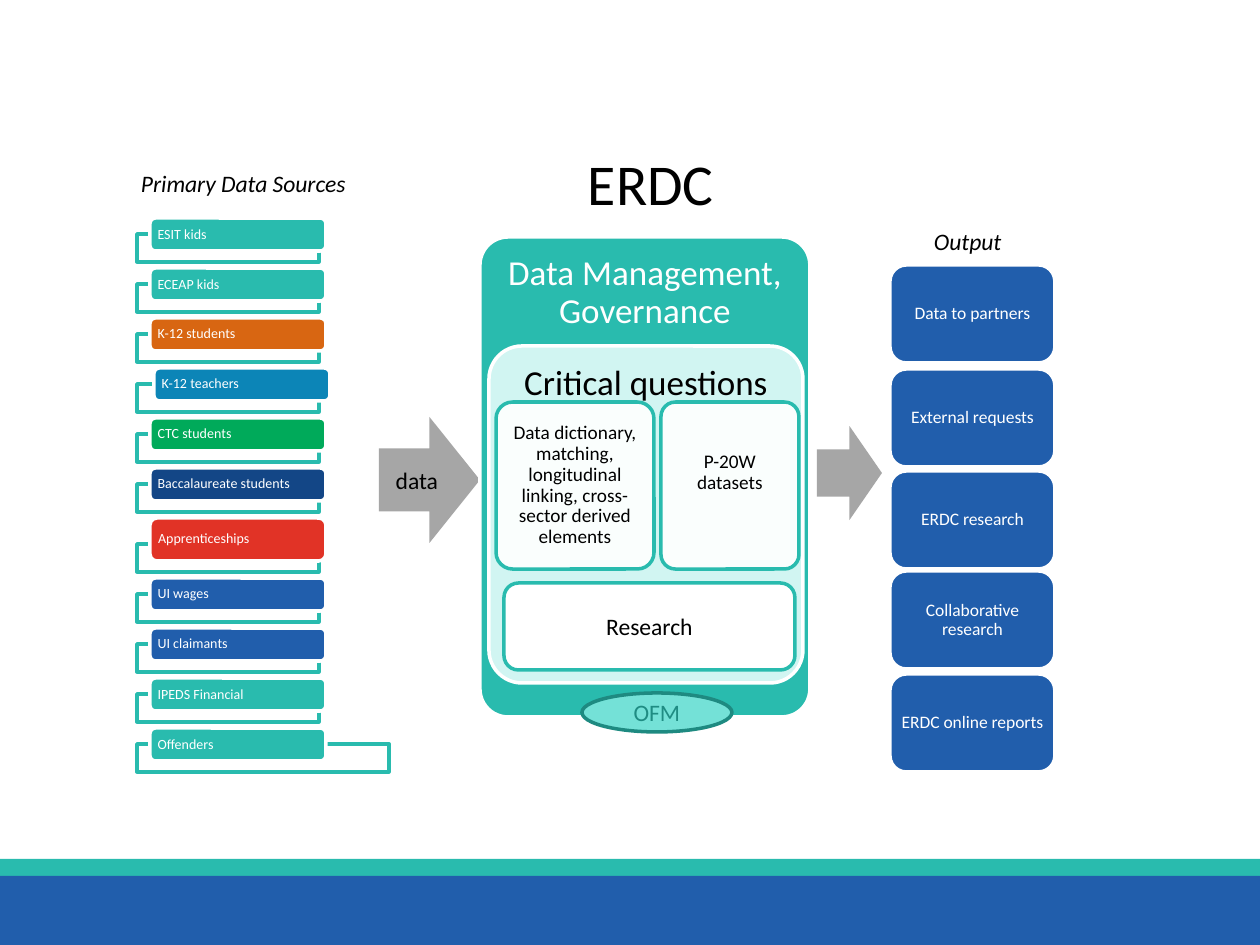
from dataclasses import dataclass

from lxml import etree
from pptx import Presentation
from pptx import util as u
from pptx.dml.color import RGBColor
from pptx.enum import shapes, text
from pptx.oxml.ns import qn

SCALE = 914400 / 126
KIND = shapes.MSO_SHAPE
ALIGN = text.PP_ALIGN
SIDE = text.MSO_ANCHOR


@dataclass(frozen=True)
class Theme:
    font: str = "Calibri"
    teal: str = "29BBAE"
    blue: str = "215EAC"
    navy: str = "134686"
    sky: str = "0C85B7"
    green: str = "00AA5A"
    orange: str = "D86612"
    red: str = "E13326"
    gray: str = "A6A6A6"
    mint: str = "D1F5F2"
    aqua: str = "74E1D7"
    pine: str = "1E8A81"
    moss: str = "1F8C83"
    white: str = "FFFFFF"
    black: str = "000000"
    tiny: float = 8
    small: float = 10
    note: float = 11
    label: float = 13.5
    head: float = 20
    title: float = 33
    rule: float = 2


T = Theme()


def px(n):
    return u.Emu(round(n * SCALE))


def rgb(tone):
    return RGBColor.from_string(tone)


def write(shape, words, size=T.label, color=T.black, italic=False, align=ALIGN.CENTER,
          side=SIDE.MIDDLE, pad=(13, 6, 13, 6), lead=1.0, wrap=True):
    frame = shape.text_frame
    frame.word_wrap = wrap
    frame.vertical_anchor = side
    frame.margin_left, frame.margin_top, frame.margin_right, frame.margin_bottom = map(px, pad)
    para = frame.paragraphs[0]
    para.alignment = align
    para.line_spacing = lead
    run = para.add_run()
    run.text = words
    font = run.font
    font.name, font.size, font.italic = T.font, u.Pt(size), italic
    font.color.rgb = rgb(color)


def draw(slide, kind, box, fill, line=None, round_by=None, alpha=None):
    shape = slide.shapes.add_shape(kind, *map(px, box))
    shape.shadow.inherit = False
    shape.fill.solid()
    shape.fill.fore_color.rgb = rgb(fill)
    if alpha:
        tone = shape.fill._xPr.find(qn("a:solidFill"))[0]
        etree.SubElement(tone, qn("a:alpha")).set("val", str(alpha * 1000))
    if line:
        shape.line.color.rgb = rgb(line)
        shape.line.width = u.Pt(T.rule)
    else:
        shape.line.fill.background()
    if round_by:
        shape.adjustments[0] = round_by
    return shape


def title(slide, box, words, **style):
    area = slide.shapes.add_textbox(*map(px, box))
    write(area, words, align=ALIGN.LEFT, side=SIDE.TOP, wrap=False, **style)


def footer(slide, box):
    x, y, w, h = box
    draw(slide, KIND.RECTANGLE, (x, y, w, 17), T.teal)
    draw(slide, KIND.RECTANGLE, (x, y + 17, w, h - 17), T.blue)


def sources(slide, box):
    x, y, w, h = box
    rows = [
        ("ESIT kids", T.teal), ("ECEAP kids", T.teal), ("K-12 students", T.orange),
        ("K-12 teachers", T.sky), ("CTC students", T.green),
        ("Baccalaureate students", T.navy), ("Apprenticeships", T.red),
        ("UI wages", T.blue), ("UI claimants", T.blue),
        ("IPEDS Financial", T.teal), ("Offenders", T.teal),
    ]
    for name, tone in rows:
        tall = 43 if name == "Apprenticeships" else 33
        shift = 17 if name == "K-12 teachers" else 13
        reach = w if name == "Offenders" else 182
        draw(slide, KIND.RECTANGLE, (x, y + tall - 17, reach, 28), T.white, T.teal)
        tag = draw(slide, KIND.ROUNDED_RECTANGLE, (x + shift, y, 176, tall), tone, T.white)
        write(tag, name, size=T.tiny, color=T.white, align=ALIGN.LEFT, pad=(6, 0, 6, 0), lead=0.9)
        y += tall + 17


def center(slide, box):
    x, y, w, h = box
    shell = draw(slide, KIND.ROUNDED_RECTANGLE, box, T.teal, T.white, 0.085)
    write(shell, "Data Management, Governance", size=T.head, color=T.white,
          side=SIDE.TOP, pad=(10, 10, 10, 10), lead=0.9)
    core = draw(slide, KIND.ROUNDED_RECTANGLE, (x + 9, y + 109, 314, 337), T.mint, T.white, 0.105)
    write(core, "Critical questions", size=T.head, side=SIDE.TOP, pad=(10, 10, 10, 10), lead=0.9)
    cards = [
        (16, 158, 6, "Data dictionary, matching, longitudinal linking, cross-sector derived elements"),
        (181, 138, 32, "P-20W datasets"),
    ]
    for left, wide, foot, words in cards:
        card = draw(slide, KIND.ROUNDED_RECTANGLE, (x + left, y + 165, wide, 167),
                    T.white, T.teal, 0.105, alpha=90)
        write(card, words, size=T.note, pad=(6, 6, 6, foot), lead=0.9)
    study = draw(slide, KIND.ROUNDED_RECTANGLE, (x + 24, y + 346, 291, 87), T.white, T.teal)
    write(study, "Research")


def outputs(slide, box):
    x, y, w, h = box
    rows = [
        (0, "Data to partners"), (104, "External requests"), (206, "ERDC research"),
        (306, "Collaborative research"), (409, "ERDC online reports"),
    ]
    for drop, name in rows:
        card = draw(slide, KIND.ROUNDED_RECTANGLE, (x, y + drop, w, 98), T.blue, T.white)
        write(card, name, size=T.small, color=T.white, pad=(5, 5, 5, 5), lead=0.9)


def main():
    deck = Presentation()
    deck.slide_width, deck.slide_height = px(1260), px(945)
    slide = deck.slides.add_slide(deck.slide_layouts[6])
    footer(slide, (0, 859, 1260, 86))
    sources(slide, (137, 218, 252, 555))
    title(slide, (128, 163, 233, 42), "Primary Data Sources", italic=True)
    feed = draw(slide, KIND.RIGHT_ARROW, (379, 417, 101, 126), T.gray)
    write(feed, "data")
    center(slide, (480, 237, 330, 480))
    title(slide, (575, 142, 152, 83), "ERDC", size=T.title)
    outputs(slide, (890, 265, 165, 507))
    title(slide, (921, 221, 95, 42), "Output", italic=True)
    draw(slide, KIND.RIGHT_ARROW, (817, 426, 65, 94), T.gray)
    office = draw(slide, KIND.OVAL, (582, 693, 150, 39), T.aqua, T.pine)
    write(office, "OFM", color=T.moss)
    deck.save("out.pptx")


if __name__ == "__main__":
    main()
